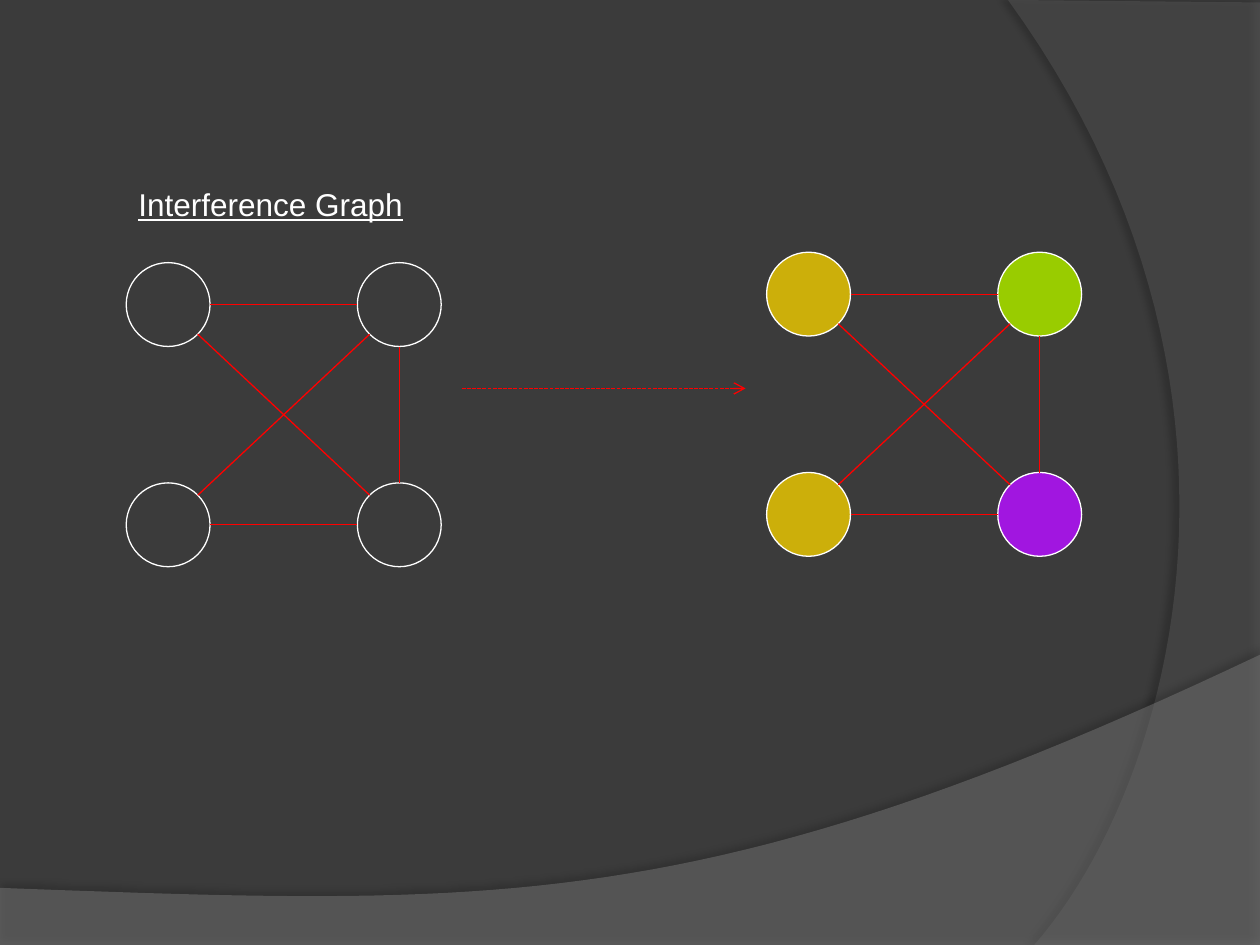
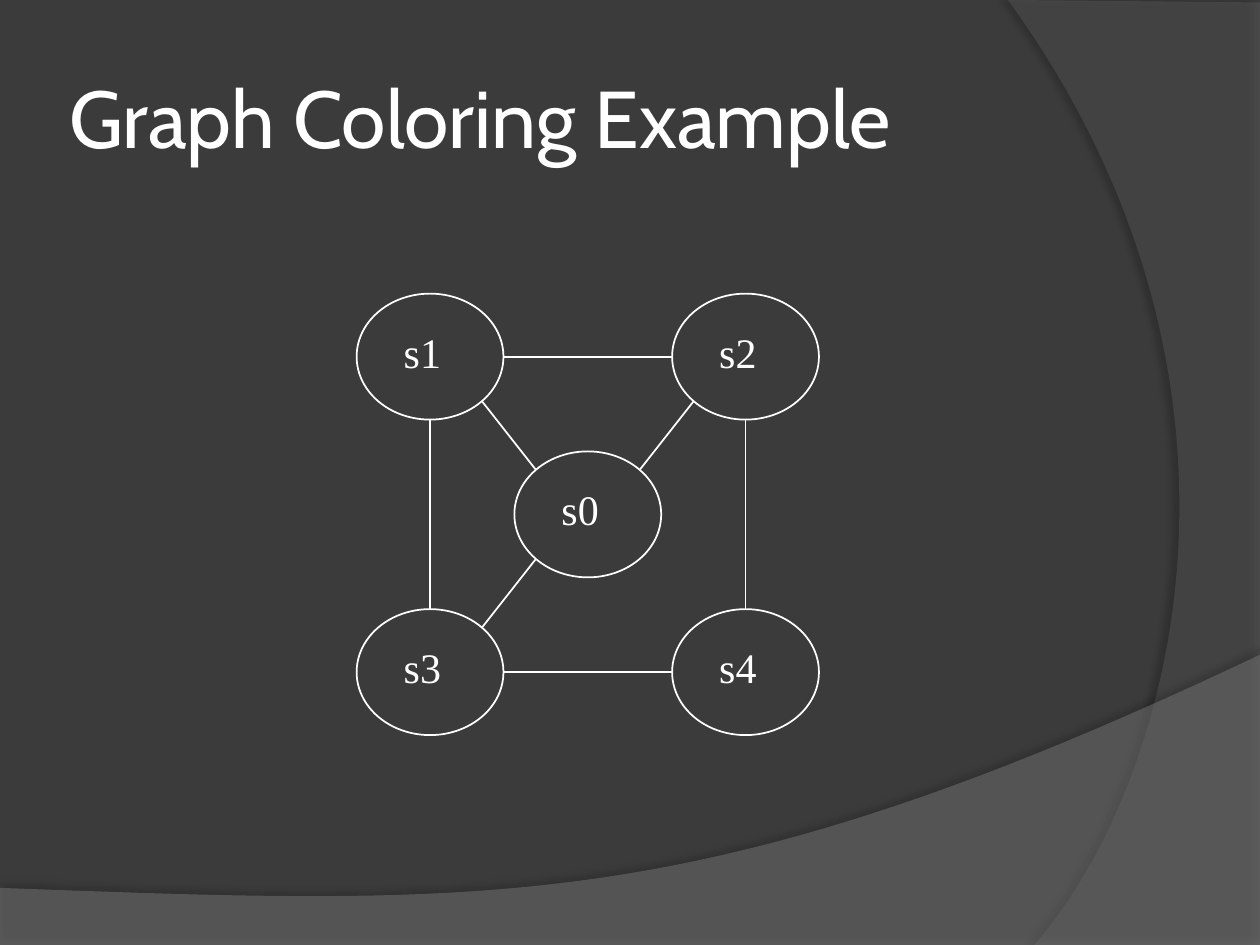
"""Builds two slides about interference graphs and graph colouring."""
from math import sqrt

from lxml import etree
from pptx import Presentation
from pptx.dml.color import RGBColor
from pptx.enum.dml import MSO_LINE
from pptx.enum.shapes import MSO_CONNECTOR, MSO_SHAPE
from pptx.enum.text import MSO_ANCHOR, MSO_AUTO_SIZE, PP_ALIGN
from pptx.oxml.ns import qn
from pptx.util import Cm, Pt

STRAIGHT = MSO_CONNECTOR.STRAIGHT
ELLIPSE = MSO_SHAPE.OVAL
DASHED = MSO_LINE.SQUARE_DOT
MIDDLE = MSO_ANCHOR.MIDDLE
LEFT, CENTER = PP_ALIGN.LEFT, PP_ALIGN.CENTER
NO_FIT, GROW = MSO_AUTO_SIZE.NONE, MSO_AUTO_SIZE.SHAPE_TO_FIT_TEXT
TITLE_ONLY, BLANK = 5, 6

BACKGROUND = RGBColor(0x3B, 0x3B, 0x3B)
BOTTOM_BAND = RGBColor(0x7F, 0x7F, 0x7F)
SIDE_BAND = RGBColor(0x5E, 0x5E, 0x5E)
WHITE = RGBColor(0xFF, 0xFF, 0xFF)
RED = RGBColor(0xFF, 0x00, 0x00)
GOLD = RGBColor(0xCC, 0xAF, 0x0A)
GREEN = RGBColor(0x99, 0xCC, 0x00)
PURPLE = RGBColor(0xA1, 0x16, 0xE0)

WIDTH, HEIGHT = 25.4, 19.05
CURVE_STEPS = 48
CIRCLE = (1.69, 1.69)
COLUMN_PITCH, ROW_PITCH = 4.66, 4.44
OVAL = (2.96, 2.54)
HALF_PITCH = 3.18
SQUARE_EDGES = [(0, 1), (2, 1), (2, 3), (0, 3), (1, 3)]
STATE_EDGES = [(1, 2), (0, 2), (1, 0), (1, 3), (3, 4), (2, 4), (3, 0)]


def curve_points(start, control1, control2, end):
    """Return points along a cubic curve, the start left out."""
    points = []
    for step in range(1, CURVE_STEPS + 1):
        t = step / CURVE_STEPS
        weights = ((1 - t) ** 3, 3 * t * (1 - t) ** 2, 3 * t * t * (1 - t), t ** 3)
        corners = (start, control1, control2, end)
        points.append(tuple(sum(w * corner[axis] for w, corner in zip(weights, corners))
                            for axis in (0, 1)))
    return points


def add_band(slide, outline, color, opacity, shadow_opacity, distance, angle):
    """Draw a translucent, shadowed band and move it to the slide master."""
    points = [(Cm(x), Cm(y)) for x, y in outline]
    builder = slide.shapes.build_freeform(*points[0])
    builder.add_line_segments(points[1:], close=True)
    band = builder.convert_to_shape()
    band.fill.solid()
    band.fill.fore_color.rgb = color
    band.line.fill.background()
    band.shadow.inherit = False
    properties = band.element.spPr
    fill_color = properties.find(qn("a:solidFill")).find(qn("a:srgbClr"))
    etree.SubElement(fill_color, qn("a:alpha"), val=str(opacity * 1000))
    shadow = etree.SubElement(
        properties.find(qn("a:effectLst")), qn("a:outerShdw"), blurRad=str(Pt(4)),
        dist=str(Pt(distance)), dir=str(angle * 60000), rotWithShape="0")
    shadow_color = etree.SubElement(shadow, qn("a:srgbClr"), val="000000")
    etree.SubElement(shadow_color, qn("a:alpha"), val=str(shadow_opacity * 1000))
    master = slide.slide_layout.slide_master
    master.shapes[0].element.addprevious(band.element)


def style_master(slide):
    """Give the slide master its background and two curved bands."""
    fill = slide.slide_layout.slide_master.background.fill
    fill.solid()
    fill.fore_color.rgb = BACKGROUND
    right = (WIDTH, 13.2)
    bottom = [(0, HEIGHT), (WIDTH, HEIGHT), right]
    bottom += curve_points(right, (14.2, 18.52), (9.93, 18.26), (0, 17.9))
    add_band(slide, bottom, BOTTOM_BAND, 45, 35, 3.5, 270)
    foot = (20.85, HEIGHT)
    side = [(WIDTH, 0.05), (WIDTH, HEIGHT), foot]
    side += curve_points(foot, (23.75, 15.72), (25.86, 7.62), (20.32, 0))
    add_band(slide, side, SIDE_BAND, 40, 45, 4, 180)


def format_text(frame, size, font, alignment=LEFT):
    """Format the runs of a one-paragraph text frame in white."""
    paragraph = frame.paragraphs[0]
    paragraph.alignment = alignment
    for run in paragraph.runs:
        run.font.size = Pt(size)
        run.font.name = font
        run.font.color.rgb = WHITE


def add_label(slide, text, box, size, font, alignment=LEFT, wrap=True):
    """Add a text box that grows with its text."""
    frame = slide.shapes.add_textbox(*map(Cm, box)).text_frame
    frame.text = text
    frame.word_wrap = wrap
    frame.auto_size = GROW
    format_text(frame, size, font, alignment)
    return frame


def add_node(shapes, center, size, line_width, color=None):
    """Add an ellipse around a centre, filled when a colour is given."""
    (x, y), (width, height) = center, size
    node = shapes.add_shape(ELLIPSE, Cm(x - width / 2), Cm(y - height / 2),
                            Cm(width), Cm(height))
    node.shadow.inherit = False
    node.line.color.rgb = WHITE
    node.line.width = Pt(line_width)
    if color is None:
        node.fill.background()
    else:
        node.fill.solid()
        node.fill.fore_color.rgb = color


def add_line(shapes, start, end, color, line_width):
    """Add a straight line without a shadow."""
    line = shapes.add_connector(STRAIGHT, *map(Cm, start + end))
    line.line.color.rgb = color
    line.line.width = Pt(line_width)
    etree.SubElement(line.element.spPr, qn("a:effectLst"))
    return line


def add_edge(shapes, start, end, size, color, line_width):
    """Join the rims of two equal ellipses, at a side or on the diagonal."""
    signs = [(b > a) - (b < a) for a, b in zip(start, end)]
    reach = sqrt(0.5) if all(signs) else 1
    offsets = [sign * reach * length / 2 for sign, length in zip(signs, size)]
    rim_start = tuple(a + offset for a, offset in zip(start, offsets))
    rim_end = tuple(b - offset for b, offset in zip(end, offsets))
    add_line(shapes, rim_start, rim_end, color, line_width)


def add_graph(shapes, centers, colors, edges, size, edge_color, line_width):
    """Add the nodes of a graph and the edges between them."""
    for center, color in zip(centers, colors):
        add_node(shapes, center, size, line_width, color)
    for first, second in edges:
        add_edge(shapes, centers[first], centers[second], size, edge_color, line_width)


def add_square_graph(slide, x, y, colors):
    """Add a grouped graph of four circles, the first centred at x, y."""
    centers = [(x + column * COLUMN_PITCH, y + row * ROW_PITCH)
               for row in (0, 1) for column in (0, 1)]
    group = slide.shapes.add_group_shape()
    add_graph(group.shapes, centers, colors, SQUARE_EDGES, CIRCLE, RED, 0.75)


def add_dashed_arrow(slide, start, end):
    """Add a dashed arrow from start to end."""
    arrow = add_line(slide.shapes, start, end, RED, 0.75)
    arrow.line.dash_style = DASHED
    etree.SubElement(arrow.element.spPr.find(qn("a:ln")), qn("a:tailEnd"), type="arrow")


def add_title(slide, text):
    """Fill and place the title placeholder."""
    title = slide.shapes.title
    title.left, title.top, title.width, title.height = map(Cm, (1.27, 0.76, 20.75, 3.18))
    frame = title.text_frame
    frame.text = text
    frame.word_wrap = True
    frame.auto_size = NO_FIT
    frame.vertical_anchor = MIDDLE
    frame.margin_left = frame.margin_right = Cm(0.13)
    frame.margin_top = frame.margin_bottom = Cm(0.13)
    format_text(frame, 46, "Cabin")


def build_interference_slide(slide):
    """Show the plain interference graph turning into a coloured one."""
    add_square_graph(slide, 3.39, 6.14, [None] * 4)
    add_square_graph(slide, 16.3, 5.93, [GOLD, GREEN, GOLD, PURPLE])
    heading = add_label(slide, "Interference Graph", (2.54, 3.6, 5.89, 1.02),
                        18, "Arial", wrap=False)
    heading.paragraphs[0].runs[0].font.underline = True
    add_dashed_arrow(slide, (9.31, 7.83), (15.03, 7.83))


def build_coloring_slide(slide):
    """Show the five-state example graph."""
    add_title(slide, "Graph Coloring Example")
    x, y = 11.85, 10.37
    centers = [(x, y)] + [(x + column * HALF_PITCH, y + row * HALF_PITCH)
                          for row in (-1, 1) for column in (-1, 1)]
    add_graph(slide.shapes, centers, [None] * 5, STATE_EDGES, OVAL, WHITE, 1)
    for number, (center_x, center_y) in enumerate(centers):
        box = (center_x - 1.26, center_y - 0.74, 2.21, 1.27)
        frame = add_label(slide, f"s{number}", box, 24, "Times New Roman", CENTER)
        frame.vertical_anchor = MIDDLE


def main():
    """Build and save the presentation."""
    presentation = Presentation()
    presentation.slide_width, presentation.slide_height = Cm(WIDTH), Cm(HEIGHT)
    layouts = presentation.slide_layouts
    interference_slide = presentation.slides.add_slide(layouts[BLANK])
    style_master(interference_slide)
    build_interference_slide(interference_slide)
    build_coloring_slide(presentation.slides.add_slide(layouts[TITLE_ONLY]))
    presentation.save("out.pptx")


if __name__ == "__main__":
    main()
